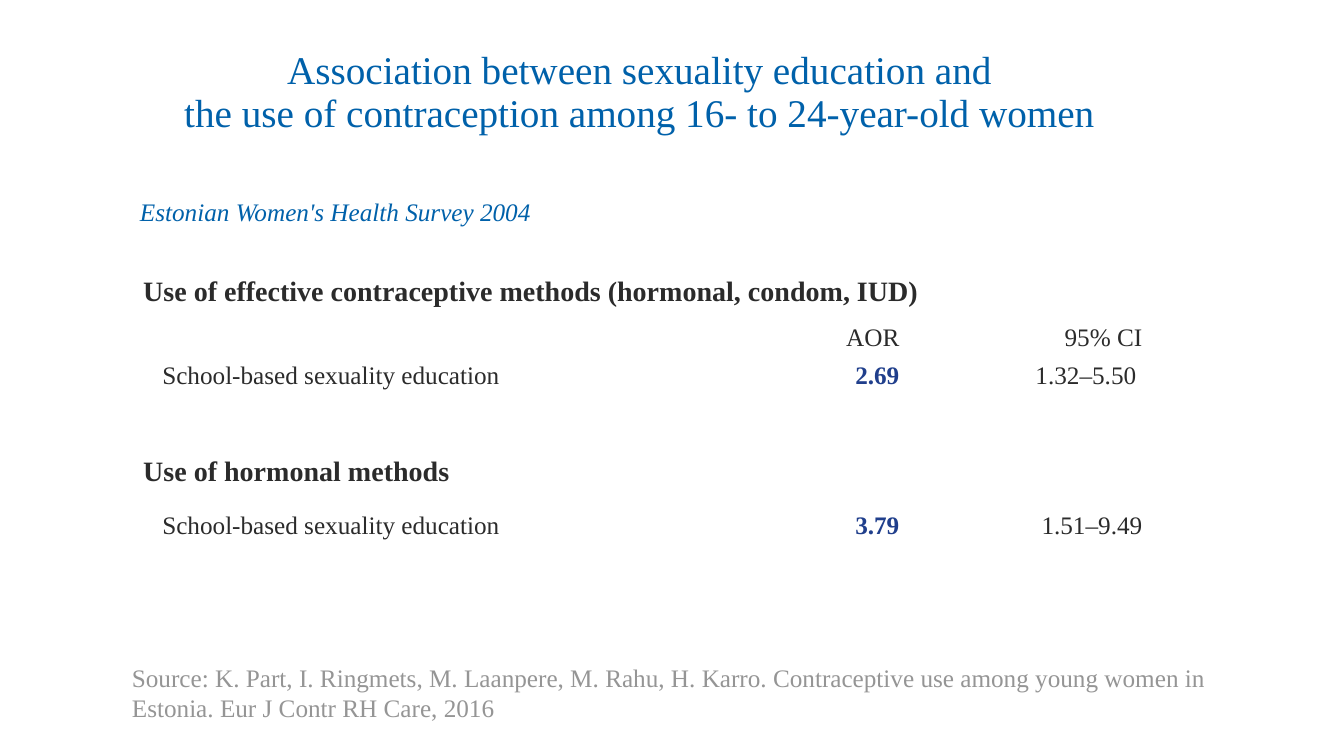
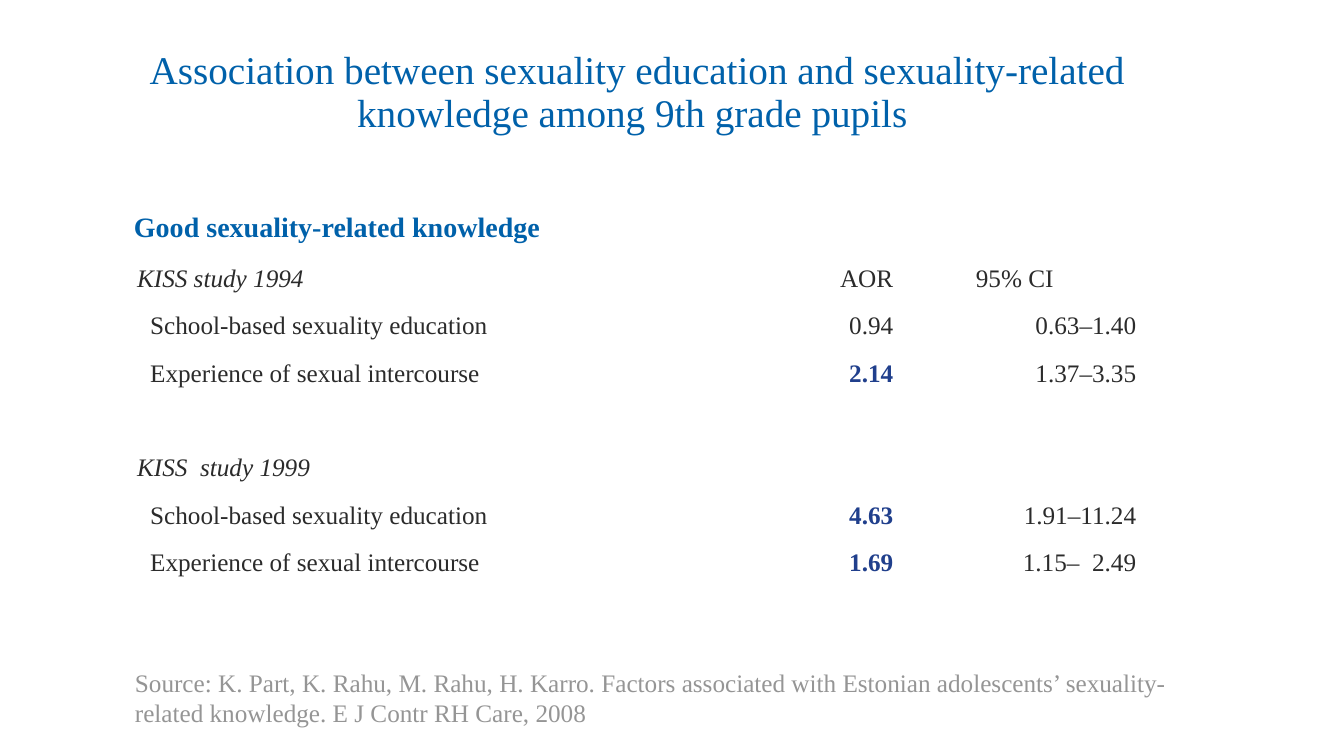
from dataclasses import dataclass

from pptx import Presentation
from pptx.dml.color import RGBColor
from pptx.enum.text import MSO_ANCHOR, MSO_AUTO_SIZE, PP_ALIGN
from pptx.util import Inches, Pt

LEFT, CENTER, RIGHT = PP_ALIGN.LEFT, PP_ALIGN.CENTER, PP_ALIGN.RIGHT
MIDDLE = MSO_ANCHOR.MIDDLE
NO_AUTOFIT = MSO_AUTO_SIZE.NONE
TITLE_ONLY = 5


@dataclass(frozen=True)
class Style:
    size: int
    color: str
    bold: bool = False
    italic: bool = False


@dataclass(frozen=True)
class Theme:
    font: str = "Times New Roman"
    title: Style = Style(28, "0061AA")
    survey: Style = Style(18, "0061AA", italic=True)
    topic: Style = Style(20, "0061AA", bold=True)
    heading: Style = Style(20, "2B2B2B", bold=True)
    body: Style = Style(18, "2B2B2B")
    study: Style = Style(18, "2B2B2B", italic=True)
    significant: Style = Style(18, "203F8C", bold=True)
    source: Style = Style(18, "959595")


@dataclass(frozen=True)
class Cell:
    """Table cell; pad is extra inset on the side the text is aligned to."""
    text: str = ""
    style: Style = Theme.body
    align: int = LEFT
    pad: float = 0


THEME = Theme()
COLUMNS = (6.19, 1.57, 2.41)
ROW_HEIGHT = 0.47
CELL_INSET = 0.13
BLANK_ROW = (Cell(), Cell(), Cell())


def format_paragraph(p, style, align=LEFT):
    p.alignment = align
    p.font.name = THEME.font
    p.font.size = Pt(style.size)
    p.font.bold = style.bold
    p.font.italic = style.italic
    p.font.color.rgb = RGBColor.from_string(style.color)


def add_titled_slide(prs, title, left, width):
    slide = prs.slides.add_slide(prs.slide_layouts[TITLE_ONLY])
    sp = slide.shapes.title
    sp.left, sp.top = Inches(left), Inches(0.3)
    sp.width, sp.height = Inches(width), Inches(1.25)
    tf = sp.text_frame
    tf.text = title
    tf.word_wrap = True
    tf.auto_size = NO_AUTOFIT
    tf.vertical_anchor = MIDDLE
    for p in tf.paragraphs:
        format_paragraph(p, THEME.title, CENTER)
        p.line_spacing = 0.9
    return slide


def add_text(slide, text, style, left, top, width, height):
    sp = slide.shapes.add_textbox(Inches(left), Inches(top), Inches(width), Inches(height))
    tf = sp.text_frame
    tf.word_wrap = True
    tf.text = text
    format_paragraph(tf.paragraphs[0], style)


def heading_row(text):
    """Single cell that spans the whole table."""
    return (Cell(text, THEME.heading),)


def result_row(label, aor, ci, indent, significant=True, ci_pad=0):
    aor_style = THEME.significant if significant else THEME.body
    return (Cell(label, pad=indent), Cell(aor, aor_style, RIGHT),
            Cell(ci, align=RIGHT, pad=ci_pad))


def fill_cell(target, cell):
    target.margin_left = Inches(CELL_INSET + (cell.pad if cell.align == LEFT else 0))
    target.margin_right = Inches(CELL_INSET + (cell.pad if cell.align == RIGHT else 0))
    target.text = cell.text
    format_paragraph(target.text_frame.paragraphs[0], cell.style, cell.align)


def add_results_table(slide, rows, left, top, heights=None):
    """Add an unbanded table; heights maps row numbers to special heights."""
    heights = heights or {}
    row_heights = [heights.get(i, ROW_HEIGHT) for i in range(len(rows))]
    table = slide.shapes.add_table(
        len(rows), len(COLUMNS), Inches(left), Inches(top),
        Inches(sum(COLUMNS)), Inches(sum(row_heights))).table
    table.first_row = table.horz_banding = False
    for column, width in zip(table.columns, COLUMNS):
        column.width = Inches(width)
    for i, (row, height) in enumerate(zip(rows, row_heights)):
        table.rows[i].height = Inches(height)
        for target in table.rows[i].cells:
            target.fill.background()
        if len(row) == 1:
            table.cell(i, 0).merge(table.cell(i, len(COLUMNS) - 1))
        for j, cell in enumerate(row):
            fill_cell(table.cell(i, j), cell)


def add_contraception_slide(prs):
    slide = add_titled_slide(
        prs, "Association between sexuality education and \v"
        "the use of contraception among 16- to 24-year-old women ", 1.21, 10.36)
    label, indent = "School-based sexuality education", 0.19
    rows = [
        BLANK_ROW,
        heading_row("Use of effective contraceptive methods (hormonal, condom, IUD)"),
        (Cell(), Cell("AOR", align=RIGHT), Cell("95% CI", align=RIGHT)),
        result_row(label, "2.69", "1.32–5.50", indent, ci_pad=0.06),
        BLANK_ROW,
        heading_row("Use of hormonal methods"),
        result_row(label, "3.79", "1.51–9.49", indent),
        BLANK_ROW,
    ]
    add_results_table(slide, rows, 1.29, 2.22, {2: 0.38, 5: 0.55})
    add_text(slide, "Estonian Women's Health Survey 2004", THEME.survey,
             1.29, 1.9, 11.24, 0.4)
    add_text(slide, "Source: K. Part, I. Ringmets, M. Laanpere, M. Rahu, H. Karro. "
             "Contraceptive use among young women in Estonia. "
             "Eur J Contr RH Care, 2016", THEME.source, 1.21, 6.52, 11.32, 0.71)


def add_knowledge_slide(prs):
    slide = add_titled_slide(
        prs, "Association between sexuality education and sexuality-related "
        "knowledge among 9th grade pupils ", 1.23, 10.18)
    school, experience = "School-based sexuality education", "Experience of sexual intercourse"
    indent = 0.13
    rows = [
        (Cell("KISS study 1994", THEME.study), Cell("AOR", align=RIGHT),
         Cell("95% CI", pad=0.56)),
        result_row(school, "0.94", "0.63–1.40", indent, significant=False),
        result_row(experience, "2.14", "1.37–3.35", indent),
        BLANK_ROW,
        (Cell("KISS  study 1999", THEME.study), Cell(), Cell()),
        result_row(school, "4.63", "1.91–11.24", indent),
        result_row(experience, "1.69", "1.15–  2.49", indent),
    ]
    add_results_table(slide, rows, 1.23, 2.58)
    add_text(slide, "Good sexuality-related knowledge", THEME.topic,
             1.23, 2.03, 11.21, 0.41)
    add_text(slide, "Source: K. Part, K. Rahu, M. Rahu, H. Karro. Factors associated "
             "with Estonian adolescents’ sexuality-related knowledge. "
             "E J Contr RH Care, 2008", THEME.source, 1.24, 6.57, 10.67, 0.71)


def main():
    prs = Presentation()
    prs.slide_width, prs.slide_height = Inches(13.33), Inches(7.5)
    add_contraception_slide(prs)
    add_knowledge_slide(prs)
    prs.save("out.pptx")


if __name__ == "__main__":
    main()
